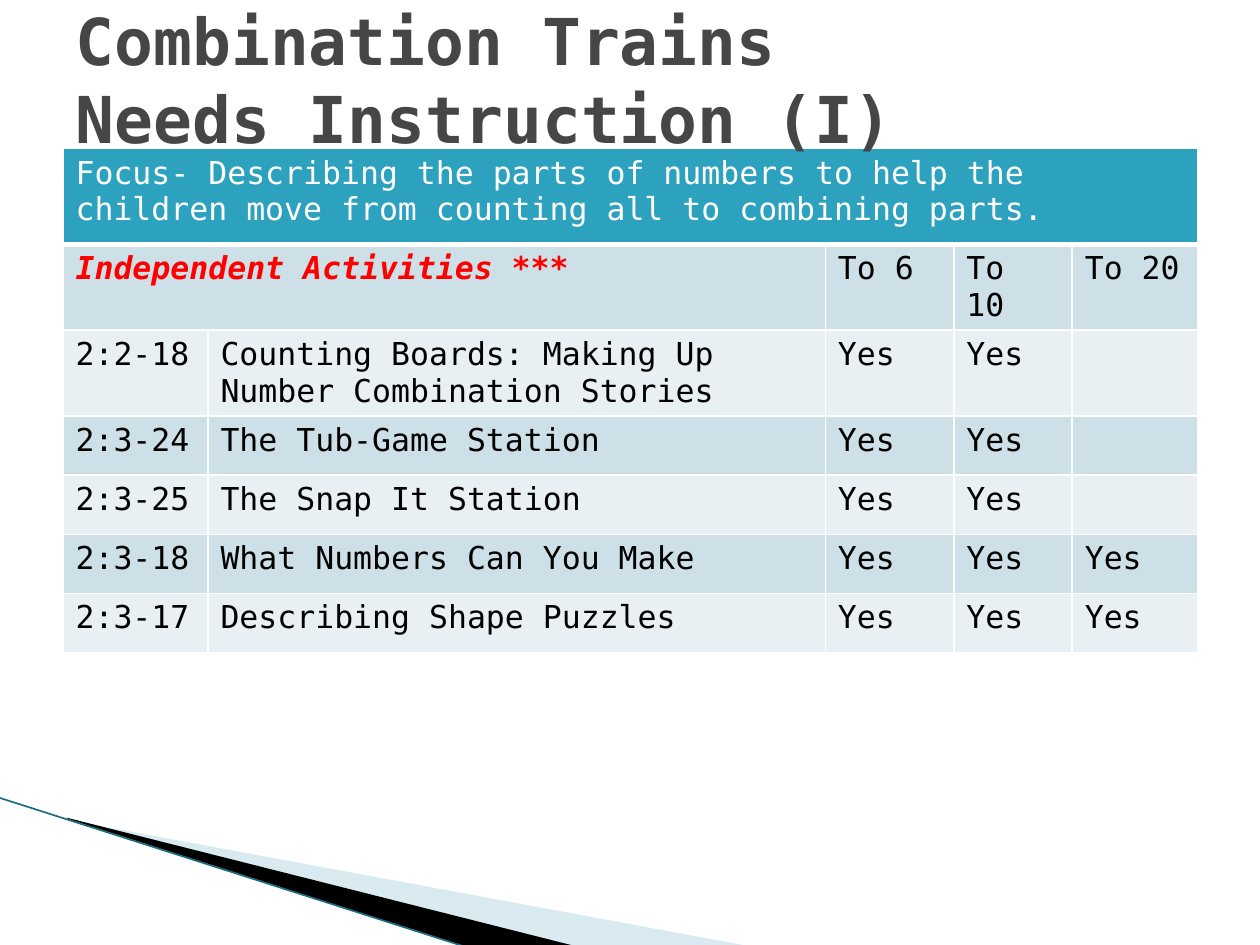
from lxml import etree
from pptx import Presentation
from pptx.dml.color import RGBColor
from pptx.enum.shapes import MSO_CONNECTOR
from pptx.enum.text import MSO_ANCHOR, MSO_AUTO_SIZE, PP_ALIGN
from pptx.oxml.ns import qn
from pptx.util import Inches, Pt

STRAIGHT = MSO_CONNECTOR.STRAIGHT
MIDDLE = MSO_ANCHOR.MIDDLE
NO_AUTOFIT = MSO_AUTO_SIZE.NONE
LEFT = PP_ALIGN.LEFT

FONT = "DejaVu Sans Mono"
TITLE_ONLY_LAYOUT = 5
COLORS = {
    "title": "464646",
    "white": "FFFFFF",
    "black": "000000",
    "red": "FF0000",
    "header": "2DA2BF",
    "dark_band": "CDE0E8",
    "light_band": "E8F0F4",
    "pale_wedge": "A0CBDC",
    "edge": "1A6E82",
}

FOCUS = ("Focus- Describing the parts of numbers to help the children "
         "move from counting all to combining parts.")
COLUMN_WIDTHS = [1.15, 4.9, 1.02, 0.94, 1]
HEADER_HEIGHT = 0.76
ROW_HEIGHT = 0.47
ROWS = [
    [FOCUS, "", "", "", ""],
    ["Independent Activities ***", "", "To 6", "To 10", "To 20"],
    ["2:2-18", "Counting Boards: Making Up Number Combination Stories",
     "Yes", "Yes", ""],
    ["2:3-24", "The Tub-Game Station", "Yes", "Yes", ""],
    ["2:3-25", "The Snap It Station", "Yes", "Yes", ""],
    ["2:3-18", "What Numbers Can You Make", "Yes", "Yes", "Yes"],
    ["2:3-17", "Describing Shape Puzzles", "Yes", "Yes", "Yes"],
]


def rgb(name):
    return RGBColor.from_string(COLORS[name])


def style_text(text_frame, size, color, bold=False, italic=False):
    for paragraph in text_frame.paragraphs:
        for run in paragraph.runs:
            font = run.font
            font.name = FONT
            font.size = Pt(size)
            font.bold = bold
            font.italic = italic
            font.color.rgb = rgb(color)


def add_wedge(slide, points, color, opacity=100):
    corners = [(Inches(x), Inches(y)) for x, y in points]
    builder = slide.shapes.build_freeform(*corners[0])
    builder.add_line_segments(corners[1:], close=True)
    shape = builder.convert_to_shape()
    shape.shadow.inherit = False
    shape.fill.solid()
    shape.fill.fore_color.rgb = rgb(color)
    shape.line.fill.background()
    if opacity < 100:
        fill_color = shape.fill._xPr.find(qn("a:solidFill"))[0]
        etree.SubElement(fill_color, qn("a:alpha"), val=str(opacity * 1000))


def add_edge_line(slide, start, end):
    line = slide.shapes.add_connector(
        STRAIGHT, *(Inches(value) for value in start + end))
    line.line.color.rgb = rgb("edge")
    line.line.width = Pt(0.95)
    etree.SubElement(line._element.spPr, qn("a:effectLst"))


def set_borders(cell, bottom_width):
    properties = cell._tc.get_or_add_tcPr()
    widths = {"a:lnL": 1, "a:lnR": 1, "a:lnT": 1, "a:lnB": bottom_width}
    for tag, width in widths.items():
        border = etree.SubElement(properties, qn(tag), w=str(Pt(width)))
        fill = etree.SubElement(border, qn("a:solidFill"))
        etree.SubElement(fill, qn("a:srgbClr"), val=COLORS["white"])


def add_activity_table(slide):
    height = HEADER_HEIGHT + ROW_HEIGHT * (len(ROWS) - 1)
    table = slide.shapes.add_table(
        len(ROWS), len(COLUMN_WIDTHS), Inches(0.5), Inches(1.18),
        Inches(sum(COLUMN_WIDTHS)), Inches(height)).table
    for column, width in zip(table.columns, COLUMN_WIDTHS):
        column.width = Inches(width)
    for row_index, texts in enumerate(ROWS):
        is_header = row_index == 0
        is_subheading = row_index == 1
        table.rows[row_index].height = Inches(
            HEADER_HEIGHT if is_header else ROW_HEIGHT)
        band = "dark_band" if row_index % 2 else "light_band"
        for column_index, text in enumerate(texts):
            cell = table.cell(row_index, column_index)
            set_borders(cell, 3 if is_header else 1)
            cell.fill.solid()
            cell.fill.fore_color.rgb = rgb("header" if is_header else band)
            cell.text_frame.text = text
            if is_subheading and column_index == 0:
                style_text(cell.text_frame, 18, "red", bold=True, italic=True)
            else:
                style_text(cell.text_frame, 18,
                           "white" if is_header else "black")
    table.cell(0, 0).merge(table.cell(0, len(COLUMN_WIDTHS) - 1))
    table.cell(1, 0).merge(table.cell(1, 1))


def format_title(slide):
    """Fill the title placeholder and bring it in front of the table."""
    title = slide.shapes.title
    title.left, title.top = Inches(0.5), Inches(0)
    title.width, title.height = Inches(9), Inches(1.25)
    text_frame = title.text_frame
    text_frame.text = "Combination Trains\vNeeds Instruction (I)"
    text_frame.word_wrap = True
    text_frame.auto_size = NO_AUTOFIT
    text_frame.vertical_anchor = MIDDLE
    text_frame.paragraphs[0].alignment = LEFT
    style_text(text_frame, 36.9, "title", bold=True)
    title._element.getparent().append(title._element)


def main():
    presentation = Presentation()
    presentation.slide_width = Inches(10)
    presentation.slide_height = Inches(7.5)
    slide = presentation.slides.add_slide(
        presentation.slide_layouts[TITLE_ONLY_LAYOUT])

    add_wedge(slide, [(0.55, 6.51), (5.95, 7.51), (4.56, 7.51), (0.55, 6.5)],
              "pale_wedge", opacity=40)
    add_wedge(slide, [(0.53, 6.49), (4.57, 7.51), (3.72, 7.52), (0.54, 6.5)],
              "black")
    add_edge_line(slide, (-0.01, 6.33), (3.71, 7.52))
    add_activity_table(slide)
    format_title(slide)

    presentation.save("out.pptx")


if __name__ == "__main__":
    main()
